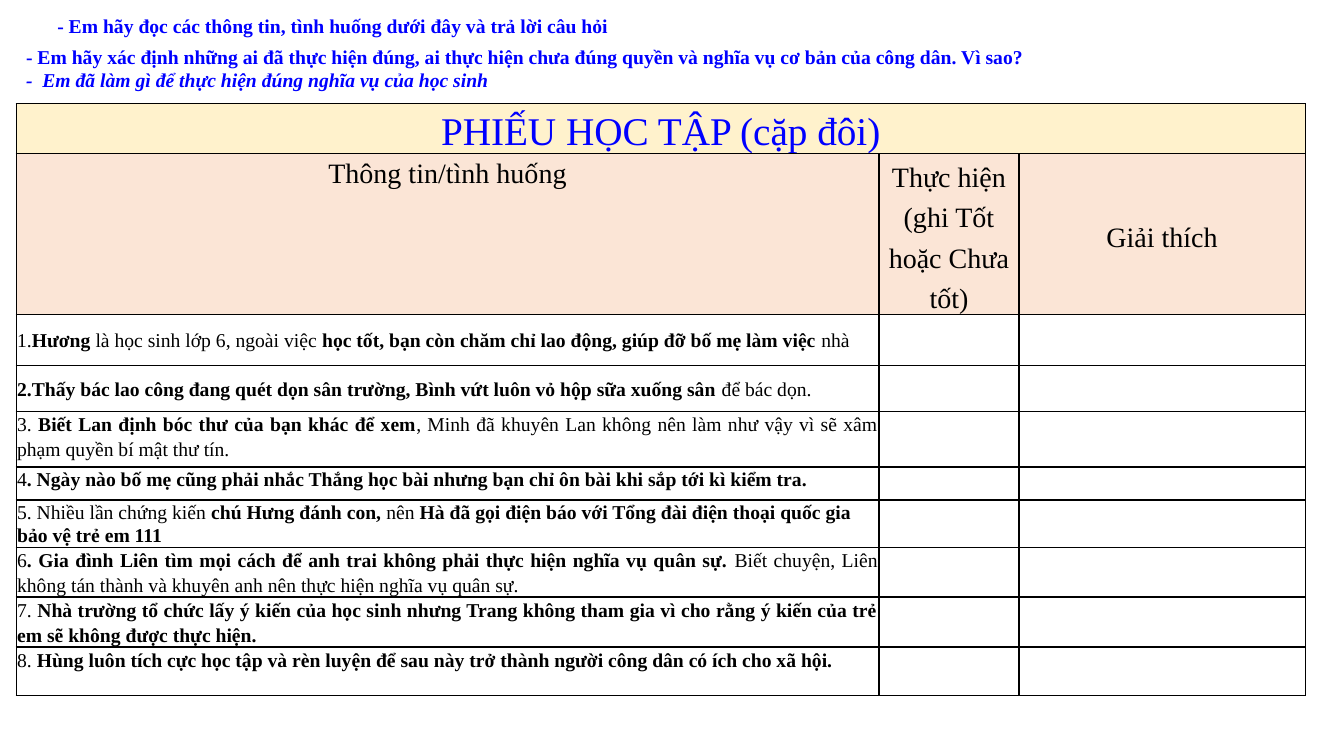
from dataclasses import dataclass

from lxml.etree import SubElement
from pptx import Presentation
from pptx.dml.color import RGBColor
from pptx.enum.text import MSO_ANCHOR as Anchor, PP_ALIGN as Align
from pptx.oxml.ns import qn
from pptx.util import Inches, Pt

BLUE = RGBColor(0x00, 0x00, 0xFF)
BLACK = RGBColor(0x00, 0x00, 0x00)
WHITE = RGBColor(0xFF, 0xFF, 0xFF)
CREAM = RGBColor(0xFF, 0xF2, 0xCC)
PEACH = RGBColor(0xFB, 0xE5, 0xD6)
FONT = "Times New Roman"
BOLD_MARK = "**"

SLIDE_WIDTH, SLIDE_HEIGHT = Inches(13.33), Inches(7.5)
GRID_COLUMNS, GRID_ROWS = 160, 90
TABLE_COLUMNS = (102.72, 16.68, 34.08)
HEADER_ROWS = (5.95, 19.05)


@dataclass(frozen=True)
class Situation:
    text: str
    rows: float
    anchor: Anchor = Anchor.TOP
    align: Align = Align.JUSTIFY
    line: float = 1.15
    after: float = 0


@dataclass(frozen=True)
class Heading:
    text: str
    row: int
    column: int
    size: float = 20
    color: RGBColor = BLACK
    fill: RGBColor = PEACH
    anchor: Anchor = Anchor.TOP
    line: float = 1.15
    after: float = 6
    inset: float = 0.84


HEADINGS = (
    Heading("PHIẾU HỌC TẬP (cặp đôi)", 0, 0, size=28, color=BLUE, fill=CREAM),
    Heading("Thông tin/tình huống", 1, 0),
    Heading("Thực hiện (ghi Tốt hoặc Chưa tốt)", 1, 1,
            anchor=Anchor.BOTTOM, line=1.29, after=0, inset=0.12),
    Heading("Giải thích", 1, 2, anchor=Anchor.MIDDLE, line=1.29, after=0, inset=0.12),
)
SITUATIONS = (
    Situation("1.**Hương **là học sinh lớp 6, ngoài việc **học tốt, bạn còn chăm chỉ "
              "lao động, giúp đỡ bố mẹ làm việc **nhà", 6.07, Anchor.MIDDLE, after=4),
    Situation("**2.Thấy bác lao công đang quét dọn sân trường, Bình vứt luôn vỏ hộp sữa "
              "xuống sân **để bác dọn.", 5.48, Anchor.MIDDLE, after=4),
    Situation("3. **Biết Lan định bóc thư của bạn khác để xem**, Minh đã khuyên Lan không "
              "nên làm như vậy vì sẽ xâm phạm quyền bí mật thư tín.", 6.67, after=4),
    Situation("4**. Ngày nào bố mẹ cũng phải nhắc Thắng học bài nhưng bạn chỉ ôn bài khi "
              "sắp tới kì kiểm tra.", 3.93, align=Align.LEFT, line=1.07),
    Situation("5. Nhiều lần chứng kiến **chú Hưng đánh con, **nên **Hà đã gọi điện báo với "
              "Tổng đài điện thoại quốc gia bảo vệ trẻ em 111", 5.6,
              align=Align.LEFT, line=1.07),
    Situation("6**. Gia đình Liên tìm mọi cách để anh trai không phải thực hiện nghĩa vụ "
              "quân sự. **Biết chuyện, Liên không tán thành và khuyên anh nên thực hiện "
              "nghĩa vụ quân sự.", 5.95, after=5),
    Situation("7. **Nhà trường tổ chức lấy ý kiến của học sinh nhưng Trang không tham gia "
              "vì cho rằng ý kiến của trẻ em sẽ không được thực hiện.", 5.95, after=5),
    Situation("8. **Hùng luôn tích cực học tập và rèn luyện để sau này trở thành người "
              "công dân có ích cho xã hội.", 5.8),
)


def across(columns: float) -> int:
    return round(SLIDE_WIDTH * columns / GRID_COLUMNS)


def down(rows: float) -> int:
    return round(SLIDE_HEIGHT * rows / GRID_ROWS)


def write(para, text: str, *, size: float = 14, color: RGBColor = BLACK,
          italic: bool = False, align: Align = Align.LEFT,
          line: float = 1.0, after: float = 0) -> None:
    """Fill a paragraph; stretches between pairs of BOLD_MARK become bold."""
    para.alignment = align
    para.line_spacing = line
    para.space_after = Pt(after)
    for index, part in enumerate(text.split(BOLD_MARK)):
        if not part:
            continue
        span = para.add_run()
        span.text = part
        font = span.font
        font.name, font.size, font.italic = FONT, Pt(size), italic
        font.bold = index % 2 == 1
        font.color.rgb = color


def style_cell(cell, fill: RGBColor, anchor: Anchor = Anchor.TOP,
               inset: float = 0.12) -> None:
    cell.fill.solid()
    cell.fill.fore_color.rgb = fill
    cell.vertical_anchor = anchor
    cell.margin_left = cell.margin_right = across(inset)
    cell.margin_top = cell.margin_bottom = 0


def add_borders(cell) -> None:
    """Draw all four edges; must run before the cell gets its fill."""
    properties = cell._tc.get_or_add_tcPr()
    for edge in ("a:lnL", "a:lnR", "a:lnT", "a:lnB"):
        border = SubElement(properties, qn(edge), w=str(Pt(1)))
        paint = SubElement(border, qn("a:solidFill"))
        SubElement(paint, qn("a:srgbClr"), val=str(BLACK))


def add_worksheet(page) -> None:
    heights = HEADER_ROWS + tuple(situation.rows for situation in SITUATIONS)
    table = page.shapes.add_table(
        len(heights), len(TABLE_COLUMNS), across(1.92), down(12.36),
        across(sum(TABLE_COLUMNS)), down(sum(heights))).table
    table.first_row = table.horz_banding = False
    for column, width in zip(table.columns, TABLE_COLUMNS):
        column.width = across(width)
    for row, height in zip(table.rows, heights):
        row.height = down(height)
    for cell in table.iter_cells():
        add_borders(cell)
        style_cell(cell, WHITE)
    table.cell(0, 0).merge(table.cell(0, len(TABLE_COLUMNS) - 1))

    for heading in HEADINGS:
        cell = table.cell(heading.row, heading.column)
        style_cell(cell, heading.fill, heading.anchor, heading.inset)
        write(cell.text_frame.paragraphs[0], heading.text, size=heading.size,
              color=heading.color, align=Align.CENTER, line=heading.line,
              after=heading.after)
    for row, situation in enumerate(SITUATIONS, start=len(HEADER_ROWS)):
        cell = table.cell(row, 0)
        cell.vertical_anchor = situation.anchor
        write(cell.text_frame.paragraphs[0], situation.text, align=situation.align,
              line=situation.line, after=situation.after)


def add_instructions(page) -> None:
    box = page.shapes.add_textbox(across(1.92), down(0.36), across(154.08), down(23.88))
    frame = box.text_frame
    frame.word_wrap = True
    task = frame.paragraphs[0]
    write(task, "**- Em hãy đọc các thông tin, tình huống dưới đây và trả lời câu hỏi",
          color=BLUE, align=Align.JUSTIFY, line=1.27, after=5)
    task._p.get_or_add_pPr().set("indent", str(across(3.72)))
    write(frame.add_paragraph(),
          "**- Em hãy xác định những ai đã thực hiện đúng, ai thực hiện chưa đúng "
          "quyền và nghĩa vụ cơ bản của công dân. Vì sao?", color=BLUE)
    write(frame.add_paragraph(),
          "**-  Em đã làm gì để thực hiện đúng nghĩa vụ của học sinh",
          color=BLUE, italic=True)


def main() -> None:
    deck = Presentation()
    deck.slide_width, deck.slide_height = SLIDE_WIDTH, SLIDE_HEIGHT
    page = deck.slides.add_slide(deck.slide_layouts.get_by_name("Blank"))
    add_worksheet(page)
    add_instructions(page)
    deck.save("out.pptx")


if __name__ == "__main__":
    main()
